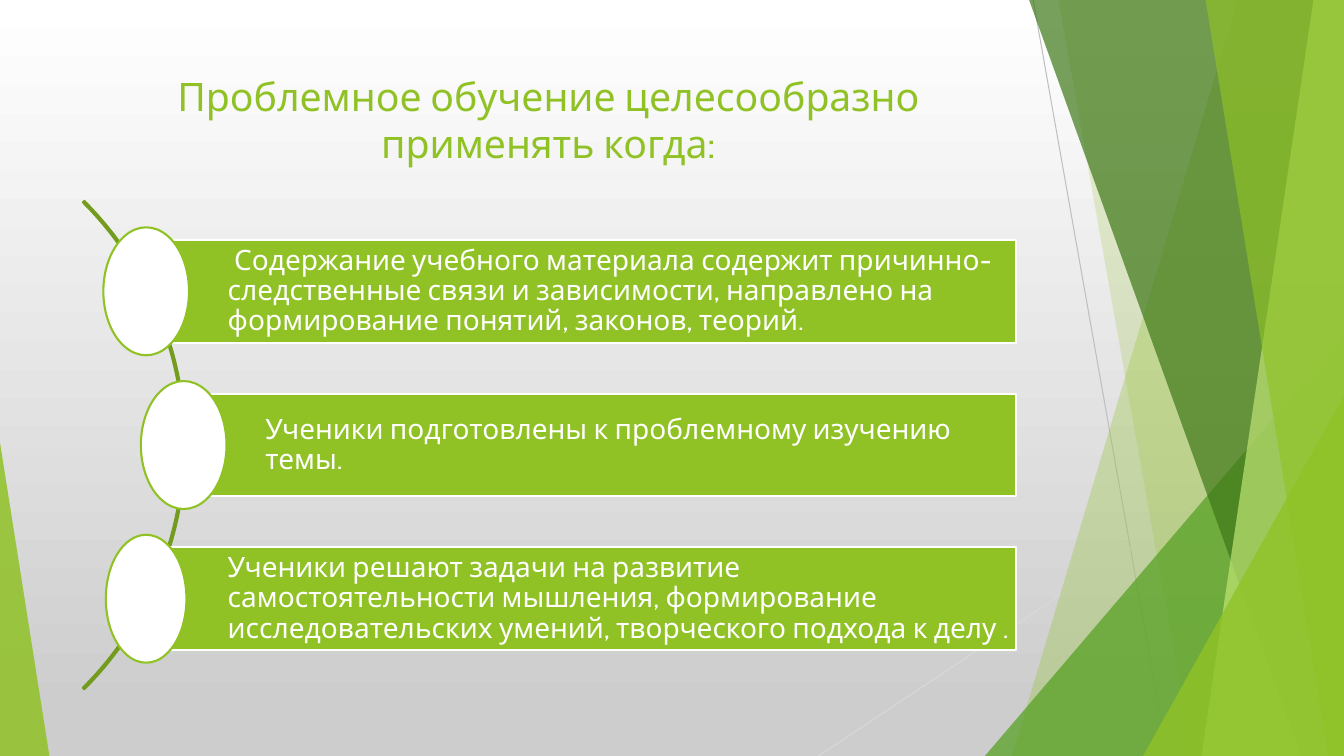
from dataclasses import dataclass

from lxml import etree
from pptx import Presentation
from pptx.dml.color import RGBColor
from pptx.enum import shapes, text
from pptx.oxml.ns import qn
from pptx.util import Pt


@dataclass(frozen=True)
class Theme:
    font: str = "Cabin"
    title_size: float = 28
    body_size: float = 20
    outline: float = 1.5
    hairline: float = 0.75
    white: str = "FFFFFF"
    bg_end: str = "CDCDCD"
    lime: str = "90C226"
    pale: str = "C0E474"
    green: str = "54A021"
    dark: str = "3F7819"
    arc: str = "739B1E"
    grey: str = "BFBFBF"
    light_grey: str = "D9D9D9"


T = Theme()
W, H = 960, 540
KIND = shapes.MSO_SHAPE

FACETS_BACK = [
    (884.2, 722.9, T.lime, 30),
    (756, 851.8, T.lime, 20),
]
FACETS_FRONT = [
    (735.1, 929.5, T.dark, 70),
    (938.2, 858.2, T.pale, 70),
    (861.1, 949, T.lime, 65),
]

TITLE = "Проблемное обучение целесообразно применять когда:"
CONDITIONS = [
    (104.4, 61.2, " Содержание учебного материала содержит причинно-следственные связи "
     "и зависимости, направлено на формирование понятий, законов, теорий."),
    (131.2, 61.2, "Ученики подготовлены к проблемному изучению темы."),
    (104.4, 57.6, "Ученики решают задачи на развитие самостоятельности мышления, "
     "формирование исследовательских умений, творческого подхода к делу ."),
]
BAR_TOP, BAR_RIGHT, BAR_HEIGHT, BAR_STEP = 171.4, 725.8, 73.4, 109.8
CIRCLE_HEIGHT = 91.4


def rgb(color):
    return RGBColor.from_string(color)


def paint(sp, fill=None, line=None, alpha=100):
    sp.shadow.inherit = False
    if fill:
        sp.fill.solid()
        sp.fill.fore_color.rgb = rgb(fill)
        if alpha < 100:
            clr = sp._element.spPr.find(qn("a:solidFill"))[0]
            etree.SubElement(clr, qn("a:alpha")).set("val", str(alpha * 1000))
    else:
        sp.fill.background()
    if line:
        sp.line.color.rgb = rgb(line)
        sp.line.width = Pt(T.outline)
    else:
        sp.line.fill.background()


def add_preset(s, kind, x, y, w, h, adj=(), **style):
    sp = s.shapes.add_shape(kind, Pt(x), Pt(y), Pt(w), Pt(h))
    for i, value in enumerate(adj):
        sp.adjustments[i] = value
    paint(sp, **style)
    return sp


def add_facet(s, top_x, bottom_x, color, alpha):
    fb = s.shapes.build_freeform(Pt(top_x), Pt(0))
    corners = [(W, 0), (W, H), (bottom_x, H)]
    fb.add_line_segments([(Pt(x), Pt(y)) for x, y in corners], close=True)
    paint(fb.convert_to_shape(), fill=color, alpha=alpha)


def add_hairline(s, x1, y1, x2, y2, color):
    line = s.shapes.add_connector(
        shapes.MSO_CONNECTOR.STRAIGHT, Pt(x1), Pt(y1), Pt(x2), Pt(y2))
    line.line.color.rgb = rgb(color)
    line.line.width = Pt(T.hairline)
    etree.SubElement(line._element.spPr, qn("a:effectLst"))


def write(sp, content, size, color, align=text.PP_ALIGN.LEFT,
          anchor=text.MSO_ANCHOR.TOP, insets=(7.2, 3.6, 7.2, 3.6), spacing=1.0):
    tf = sp.text_frame
    tf.word_wrap = True
    tf.vertical_anchor = anchor
    tf.margin_left, tf.margin_top, tf.margin_right, tf.margin_bottom = map(Pt, insets)
    p = tf.paragraphs[0]
    p.alignment = align
    p.line_spacing = spacing
    r = p.add_run()
    r.text = content
    r.font.name = T.font
    r.font.size = Pt(size)
    r.font.color.rgb = rgb(color)


def add_background(s):
    fill = s.background.fill
    fill.gradient()
    fill.gradient_angle = 270
    for stop, position, color in zip(fill.gradient_stops, (0, 0.94), (T.white, T.bg_end)):
        stop.position = position
        stop.color.rgb = rgb(color)


def add_decoration(s):
    triangle = KIND.ISOSCELES_TRIANGLE
    add_hairline(s, 738, 0, 833.8, H, T.grey)
    add_hairline(s, W, 290.2, 584.6, H, T.light_grey)
    for facet in FACETS_BACK:
        add_facet(s, *facet)
    add_preset(s, triangle, 703.5, 239.8, 256.5, 300.2, [1], fill=T.green, alpha=72)
    for facet in FACETS_FRONT:
        add_facet(s, *facet)
    add_preset(s, triangle, 816.5, 283, 143.5, 257, [1], fill=T.lime, alpha=80)
    add_preset(s, triangle, 0, 316.1, 35.3, 223.9, [0], fill=T.lime, alpha=85)


def add_condition(s, index, left, circle_width, content):
    top = BAR_TOP + index * BAR_STEP
    bar = add_preset(s, KIND.RECTANGLE, left, top, BAR_RIGHT - left, BAR_HEIGHT,
                     fill=T.lime, line=T.white)
    write(bar, content, T.body_size, T.white, anchor=text.MSO_ANCHOR.MIDDLE,
          insets=(58.3, 4.3, 4.3, 4.3), spacing=0.9)
    add_preset(s, KIND.OVAL, left - circle_width / 2,
               top + (BAR_HEIGHT - CIRCLE_HEIGHT) / 2, circle_width, CIRCLE_HEIGHT,
               fill=T.white, line=T.lime)


def main():
    prs = Presentation()
    prs.slide_width, prs.slide_height = Pt(W), Pt(H)
    s = prs.slides.add_slide(prs.slide_layouts[6])
    add_background(s)
    add_decoration(s)
    title = s.shapes.add_textbox(Pt(53.3), Pt(48.2), Pt(676.8), Pt(87.1))
    write(title, TITLE, T.title_size, T.lime, align=text.PP_ALIGN.CENTER)
    add_preset(s, KIND.BLOCK_ARC, -360.7, 71.3, 493.2, 493.2, [189, 27, 0.003], line=T.arc)
    for index, condition in enumerate(CONDITIONS):
        add_condition(s, index, *condition)
    prs.save("out.pptx")


if __name__ == "__main__":
    main()
